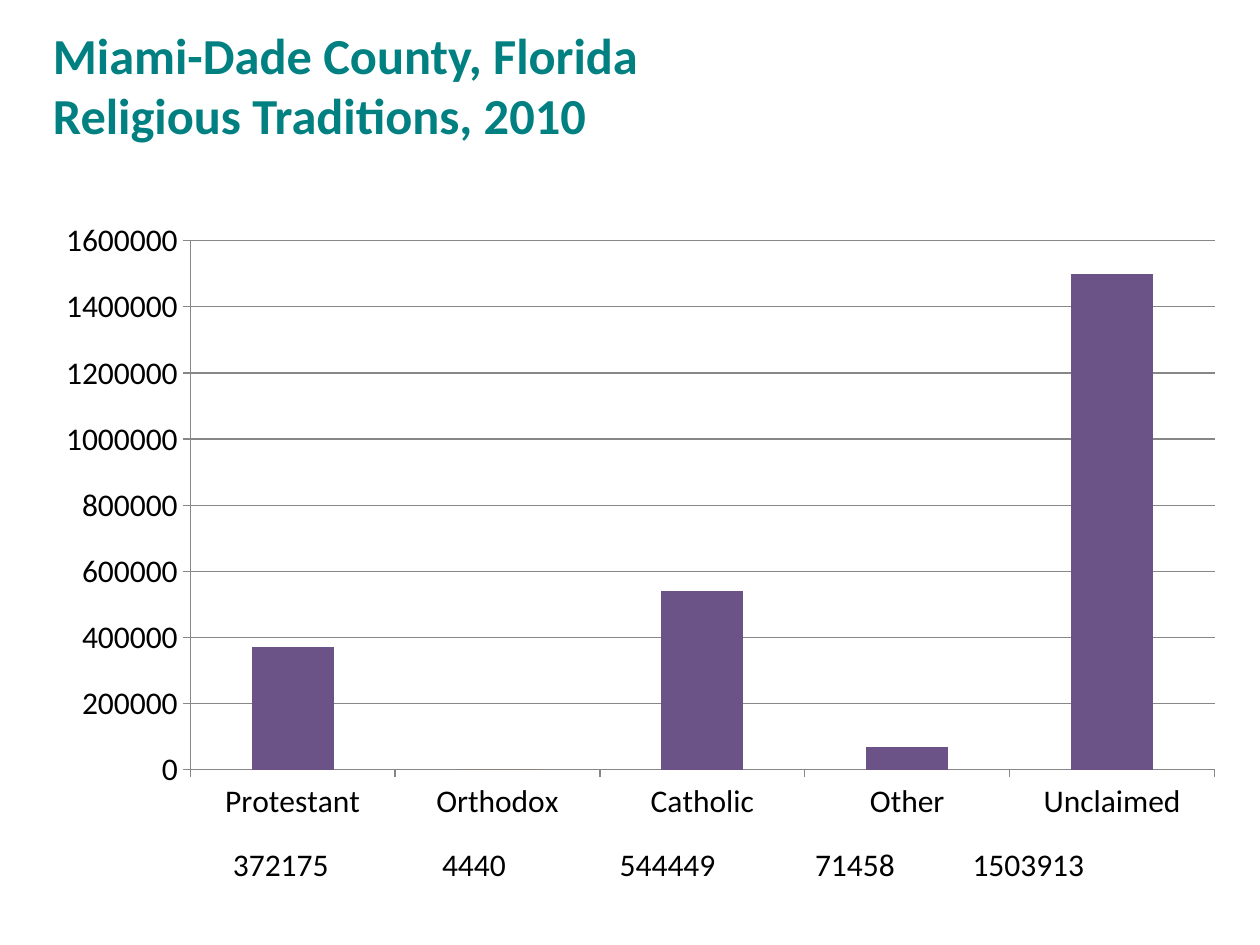
import pptx
import pptx.chart.data
import pptx.dml.color
import pptx.enum.chart
import pptx.enum.text
import pptx.util
from lxml import etree
from pptx.oxml import ns

Inches = pptx.util.Inches
Pt = pptx.util.Pt

COLORS = {"title": "008080", "text": "000000", "line": "878787",
          "purple": "6B5287", "red": "C0504D", "green": "9BBB59"}
TRADITIONS = {"Protestant": 372175, "Orthodox": 4440, "Catholic": 544449,
              "Other": 71458, "Unclaimed": 1503913}


def add_element(parent, tag, **attributes):
    return etree.SubElement(parent, ns.qn(tag), attributes)


class SlideBuilder:
    font_name = "Calibri"

    def __init__(self, page):
        self.page = page

    def color(self, name):
        return pptx.dml.color.RGBColor.from_string(COLORS[name])

    def style_font(self, font, size, color, bold=False):
        values = {"name": self.font_name, "size": Pt(size), "bold": bold}
        for key, value in values.items():
            setattr(font, key, value)
        font.color.rgb = self.color(color)

    def place(self, box, left, top, width, height):
        values = {"left": left, "top": top, "width": width, "height": height}
        for key, value in values.items():
            setattr(box, key, Inches(value))

    def title(self, text, *position):
        box = self.page.shapes.title
        self.place(box, *position)
        frame = box.text_frame
        values = {"margin_left": 0, "margin_top": 0, "margin_right": 0,
                  "margin_bottom": 0, "word_wrap": True,
                  "auto_size": pptx.enum.text.MSO_AUTO_SIZE.NONE,
                  "vertical_anchor": pptx.enum.text.MSO_ANCHOR.TOP}
        for key, value in values.items():
            setattr(frame, key, value)
        para = frame.paragraphs[0]
        para.text = text
        para.alignment = pptx.enum.text.PP_ALIGN.LEFT
        for span in para.runs:
            self.style_font(span.font, 28.8, "title", bold=True)

    def tabbed_text(self, items, tab_stops, *position):
        box = self.page.shapes.add_textbox(*map(Inches, position))
        frame = box.text_frame
        frame.word_wrap = True
        frame.auto_size = pptx.enum.text.MSO_AUTO_SIZE.SHAPE_TO_FIT_TEXT
        para = frame.paragraphs[0]
        para.text = "\t".join(items)
        tab_list = add_element(para._p.get_or_add_pPr(), "a:tabLst")
        for stop in tab_stops:
            add_element(tab_list, "a:tab", pos=str(Inches(stop)), algn="l")
        for span in para.runs:
            self.style_font(span.font, 18, "text")

    def stacked_columns(self, categories, series, plot_area, *position):
        data = pptx.chart.data.CategoryChartData()
        data.categories = categories
        for name, (values, _) in series.items():
            data.add_series(name, values)
        chart = self.page.shapes.add_chart(
            pptx.enum.chart.XL_CHART_TYPE.COLUMN_STACKED,
            *map(Inches, position), data).chart
        chart.has_legend = False
        chart.has_title = False
        self.style_font(chart.font, 18, "text")

        # Columns
        plot = chart.plots[0]
        plot.vary_by_categories = False
        plot.gap_width = 150
        plot.overlap = 100
        for bars, (_, color) in zip(plot.series, series.values()):
            bars.format.fill.solid()
            bars.format.fill.fore_color.rgb = self.color(color)

        # Axes and grid
        values = {"minimum_scale": 0, "maximum_scale": 1600000,
                  "major_unit": 200000, "has_major_gridlines": True}
        for key, value in values.items():
            setattr(chart.value_axis, key, value)
        chart.category_axis.has_major_gridlines = False
        for axis in (chart.category_axis, chart.value_axis):
            axis.major_tick_mark = pptx.enum.chart.XL_TICK_MARK.OUTSIDE
            axis.minor_tick_mark = pptx.enum.chart.XL_TICK_MARK.NONE
        for part in (chart.category_axis, chart.value_axis,
                     chart.value_axis.major_gridlines):
            part.format.line.color.rgb = self.color("line")
            part.format.line.width = Pt(0.75)
        self.fix_plot_area(chart, plot_area, position)

    def fix_plot_area(self, chart, plot_area, position):
        """Turn the plot area's slide inches into fractions of the chart."""
        left, top, width, height = position
        x, y, w, h = plot_area
        fractions = {"x": (x - left) / width, "y": (y - top) / height,
                     "w": w / width, "h": h / height}
        area = chart._chartSpace.chart.plotArea
        for old in area.findall(ns.qn("c:layout")):
            area.remove(old)
        layout = etree.Element(ns.qn("c:layout"))
        area.insert(0, layout)
        manual = add_element(layout, "c:manualLayout")
        add_element(manual, "c:layoutTarget", val="inner")
        for side in "xy":
            add_element(manual, f"c:{side}Mode", val="edge")
        for key, value in fractions.items():
            add_element(manual, f"c:{key}", val=str(value))


def main():
    deck = pptx.Presentation()
    deck.slide_width = Inches(10)
    deck.slide_height = Inches(7.5)
    builder = SlideBuilder(deck.slides.add_slide(deck.slide_layouts[5]))

    # Heading
    builder.title("Miami-Dade County, Florida\vReligious Traditions, 2010",
                  0.42, 0.19, 9.16, 0.54)

    # Adherents by tradition, to the nearest ten thousand
    rounded = [round(count, -4) for count in TRADITIONS.values()]
    series = {"Series 1": (rounded, "purple"),
              "Series 2": ([None, 0, 0, 0, None], "red"),
              "Series 3": ([0, 0, 0, 0, None], "green")}
    builder.stacked_columns(list(TRADITIONS), series, (1.51, 1.91, 8.13, 4.2),
                            0.33, 1.67, 9.5, 4.95)

    # Figures under the columns
    builder.tabbed_text([str(count) for count in TRADITIONS.values()],
                        [1.66, 3.07, 4.62, 5.87], 1.75, 6.66, 8.25, 0.4)

    deck.save("out.pptx")


if __name__ == "__main__":
    main()
